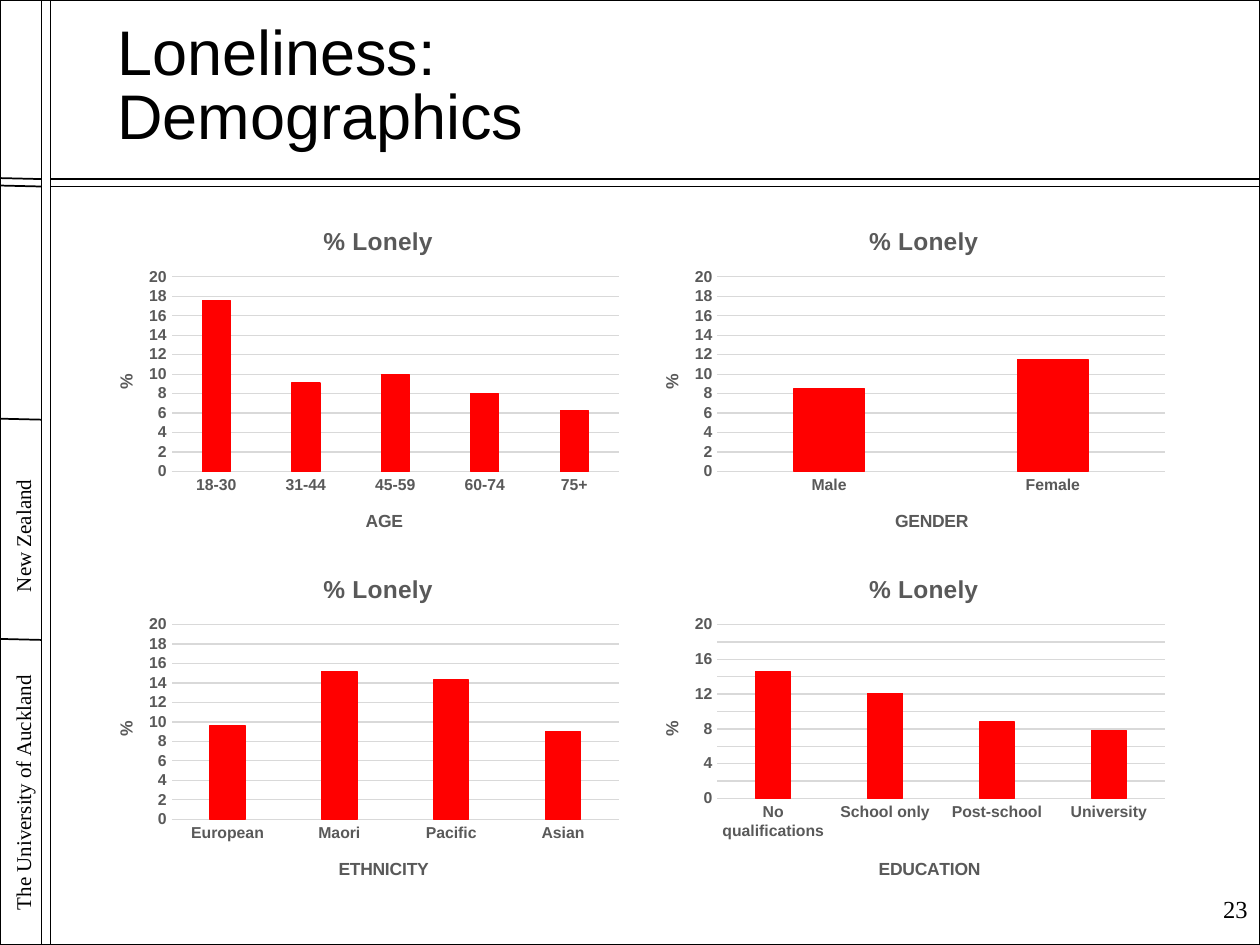
from dataclasses import dataclass

from lxml import etree
from pptx import Presentation
from pptx import util as u
from pptx.chart.data import CategoryChartData
from pptx.dml.color import RGBColor
from pptx.enum import chart as charts, shapes, text
from pptx.oxml.ns import qn


@dataclass(frozen=True)
class Theme:
    ink: RGBColor = RGBColor(0, 0, 0)
    bar: RGBColor = RGBColor(255, 0, 0)
    label: RGBColor = RGBColor(0x59, 0x59, 0x59)
    grid: RGBColor = RGBColor(0xD9, 0xD9, 0xD9)
    sans: str = "Arial"
    serif: str = "Times New Roman"
    title: int = 36
    chart_title: int = 14
    page: int = 14
    side: int = 12
    axis_title: int = 10
    tick: int = 9
    thin: float = 0.75
    stub: float = 1


def set_layout(parent, index, x, y, w=None, h=None):
    for old in parent.findall(qn("c:layout")):
        parent.remove(old)
    layout = etree.Element(qn("c:layout"))
    manual = etree.SubElement(layout, qn("c:manualLayout"))
    values = [("xMode", "edge"), ("yMode", "edge"), ("x", x), ("y", y)]
    if w:
        values = [("layoutTarget", "inner")] + values + [("w", w), ("h", h)]
    for name, value in values:
        etree.SubElement(manual, qn(f"c:{name}")).set("val", str(value))
    parent.insert(index, layout)


class Deck:
    def __init__(self, theme, width, height):
        self.theme = theme
        self.prs = Presentation()
        self.prs.slide_width, self.prs.slide_height = u.Cm(width), u.Cm(height)
        self.s = self.prs.slides.add_slide(self.prs.slide_layouts[5])

    def style(self, font, size, name, color, bold=False):
        font.size, font.name, font.bold = u.Pt(size), name, bold
        font.color.rgb = color

    def title(self, lines, x, y, w, h):
        sp = self.s.shapes.title
        sp.left, sp.top, sp.width, sp.height = map(u.Cm, (x, y, w, h))
        tf = sp.text_frame
        tf.word_wrap = True
        tf.auto_size = text.MSO_AUTO_SIZE.NONE
        tf.vertical_anchor = text.MSO_ANCHOR.MIDDLE
        p = tf.paragraphs[0]
        p.alignment, p.line_spacing = text.PP_ALIGN.LEFT, 0.85
        for i, line in enumerate(lines):
            if i:
                p.add_line_break()
            r = p.add_run()
            r.text = line
            self.style(r.font, self.theme.title, self.theme.sans, self.theme.ink)

    def label(self, words, x, y, w, h, size, align, anchor, rotation=0):
        sp = self.s.shapes.add_textbox(*map(u.Cm, (x, y, w, h)))
        sp.rotation = rotation
        tf = sp.text_frame
        tf.word_wrap = True
        tf.vertical_anchor = anchor
        p = tf.paragraphs[0]
        p.alignment = align
        r = p.add_run()
        r.text = words
        self.style(r.font, size, self.theme.serif, self.theme.ink)

    def line(self, x1, y1, x2, y2, weight):
        sp = self.s.shapes.add_connector(
            shapes.MSO_CONNECTOR.STRAIGHT, *map(u.Cm, (x1, y1, x2, y2)))
        sp.line.color.rgb = self.theme.ink
        sp.line.width = u.Pt(weight)
        etree.SubElement(sp._element.spPr, qn("a:effectLst"))

    def frame(self, w, h):
        sp = self.s.shapes.add_shape(
            shapes.MSO_SHAPE.RECTANGLE, 0, 0, u.Cm(w), u.Cm(h))
        sp.shadow.inherit = False
        sp.fill.background()
        sp.line.color.rgb = self.theme.ink
        sp.line.width = u.Pt(self.theme.thin)

    def heading(self, holder, words, size, x, y):
        tf = holder.text_frame
        r = tf.paragraphs[0].add_run()
        r.text = words
        self.style(r.font, size, self.theme.sans, self.theme.label, True)
        set_layout(holder._element, 1, x, y)
        return tf

    def chart(self, name, name_x, values, x, y, w, h, plot_h):
        t = self.theme
        data = CategoryChartData()
        data.categories = list(values)
        data.add_series("Series 1", list(values.values()))
        chart = self.s.shapes.add_chart(
            charts.XL_CHART_TYPE.COLUMN_CLUSTERED,
            *map(u.Cm, (x, y, w, h)), data).chart
        chart.has_legend = False
        chart.font.size, chart.font.name = u.Pt(t.axis_title), t.sans
        chart.has_title = True
        self.heading(chart.chart_title, "% Lonely", t.chart_title, 0.43, 0.05)

        cat, val = chart.category_axis, chart.value_axis
        for axis in (cat, val):
            axis.major_tick_mark = charts.XL_TICK_MARK.NONE
            self.style(axis.tick_labels.font, t.tick, t.sans, t.label, True)
        cat.format.line.color.rgb = t.grid
        cat.format.line.width = u.Pt(t.thin)
        self.heading(cat.axis_title, name, t.axis_title, name_x, 0.87)
        val.minimum_scale, val.maximum_scale, val.major_unit = 0, 20, 2
        val.format.line.fill.background()
        val.major_gridlines.format.line.color.rgb = t.grid
        val.major_gridlines.format.line.width = u.Pt(t.thin)
        tf = self.heading(val.axis_title, "%", t.axis_title, 0.05, 0.48)
        tf._txBody.bodyPr.set("rot", "-5400000")
        tf._txBody.bodyPr.set("vert", "horz")

        plot = chart.plots[0]
        plot.gap_width, plot.overlap, plot.vary_by_categories = 219, -27, False
        fmt = plot.series[0].format
        fmt.fill.solid()
        fmt.fill.fore_color.rgb = t.bar
        fmt.line.color.rgb = t.bar
        fmt.line.width = u.Pt(t.thin)
        area = chart._chartSpace.find(".//" + qn("c:plotArea"))
        set_layout(area, 0, 0.16, 0.21, 0.82, plot_h)


def main():
    width, height = 25.4, 19.05
    theme = Theme()
    deck = Deck(theme, width, height)
    middle, top = text.MSO_ANCHOR.MIDDLE, text.MSO_ANCHOR.TOP
    rail_left, rail_right = 0.84, 1.02
    rules = (3.61, 3.76)

    for words, y, w in (("The University of Auckland", 15.98, 5.72),
                        ("New Zealand", 10.8, 3.81)):
        h = 0.88
        deck.label(words, 0.52 - w / 2, y - h / 2, w, h, theme.side,
                   text.PP_ALIGN.CENTER, top, 270)
    for y in (*rules, 8.46, 12.9):
        deck.line(0, y - 0.02, rail_left, y, theme.stub)
    for x in (rail_left, rail_right):
        deck.line(x, 0, x, height, theme.thin)
    for y in rules:
        deck.line(rail_right, y, width, y, theme.thin)
    deck.frame(width, height)

    deck.title(["Loneliness:", "Demographics"], 2.11, 0.53, 15.42, 2.49)
    deck.label("23", 24.2, 17.68, 1.2, 1.27, theme.page,
               text.PP_ALIGN.RIGHT, middle)

    panels = [
        ("AGE", 0.51, 0.56, {"18-30": 17.6, "31-44": 9.1, "45-59": 10,
                             "60-74": 8, "75+": 6.3}),
        ("GENDER", 0.48, 0.56, {"Male": 8.5, "Female": 11.5}),
        ("ETHNICITY", 0.46, 0.56, {"European": 9.6, "Maori": 15.2,
                                   "Pacific": 14.3, "Asian": 9}),
        ("EDUCATION", 0.45, 0.5, {"No qualifications": 14.6,
                                  "School only": 12.1,
                                  "Post-school": 8.8, "University": 7.8}),
    ]
    w, h = 11, 7.01
    for i, (name, name_x, plot_h, values) in enumerate(panels):
        row, col = divmod(i, 2)
        deck.chart(name, name_x, values, 1.7 + col * w, 4.11 + row * h,
                   w, h, plot_h)

    deck.prs.save("out.pptx")


if __name__ == "__main__":
    main()
